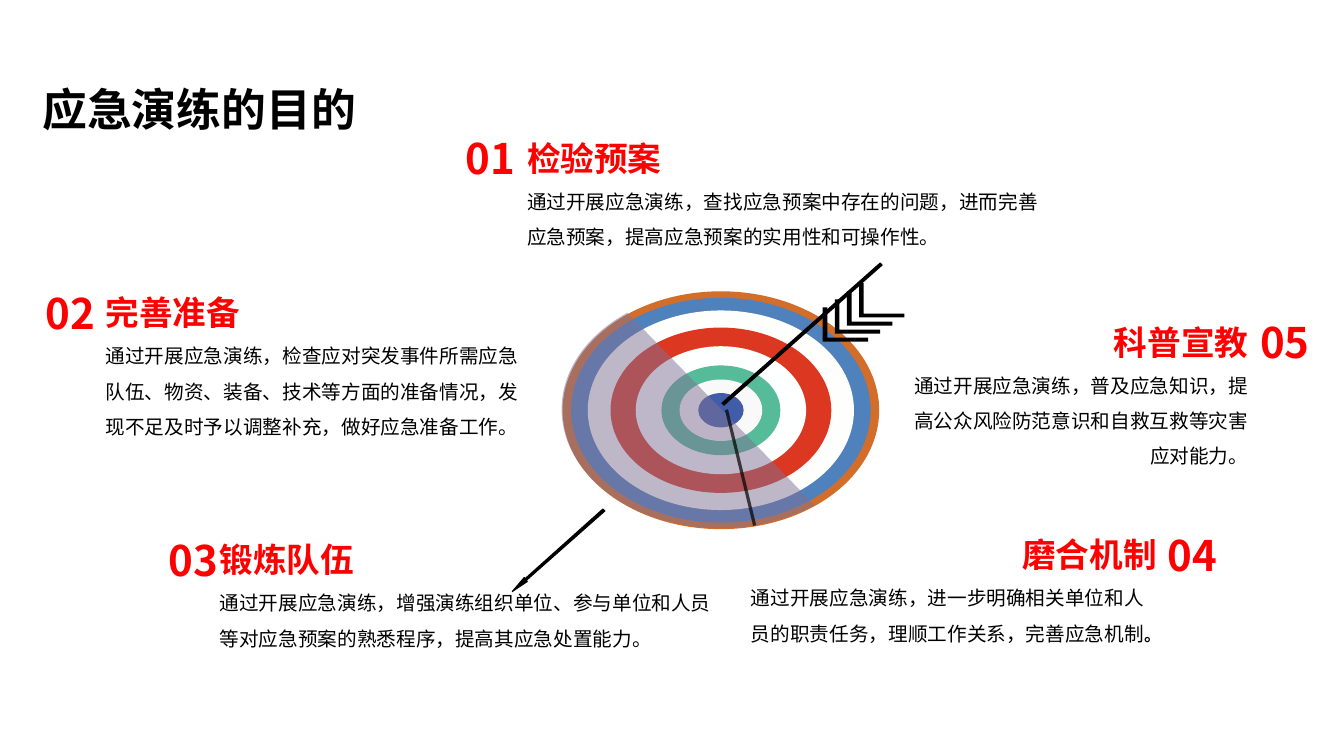
from lxml.etree import SubElement
from pptx import Presentation
from pptx.dml.color import RGBColor
from pptx.enum.shapes import MSO_SHAPE
from pptx.enum.text import MSO_ANCHOR, MSO_AUTO_SIZE, PP_ALIGN
from pptx.oxml.ns import qn
from pptx.util import Pt

PX = 9144
FONT = "Noto Sans CJK SC"
BLACK = "000000"
RED = "FF0000"
LEFT, RIGHT = PP_ALIGN.LEFT, PP_ALIGN.RIGHT

RINGS = [
    (314, 236, "D26E29"),
    (297, 223, "4F81BD"),
    (264, 198, "FEFEFD"),
    (219, 164, "DC3720"),
    (169, 127, "FEFFFF"),
    (118, 89, "55BB99"),
    (82, 61, "F9F9F9"),
    (45, 34, "415DA9"),
]
ARROW_TIP = [(40, 216), (42, 218), (-36, 287), (-35, 288), (-50, 298), (-38, 284), (-37, 285)]
ARROW_SHAFT = [(315, -28), (317, -26), (160, 113), (158, 111)]
ARROW_SHADE = [(192, 232), (189, 233), (161, 118), (164, 117)]

GOALS = [
    ((513, 112, 536, 141), "01", 8, LEFT, LEFT, "检验预案",
     ["通过开展应急演练，查找应急预案中存在的问题，进而完善应急预案，提高应急预案的实用性和可操作性。"]),
    ((735, 505, 422, 141), "04", 9, RIGHT, LEFT, "磨合机制",
     ["通过开展应急演练，进一步明确相关单位和人员的职责任务，理顺工作关系，完善应急机制", "。"]),
    ((881, 294, 367, 177), "05", 8, RIGHT, RIGHT, "科普宣教",
     ["通过开展应急演练，普及应急知识，提高公众风险防范意识和自救互救等灾害应对能力。"]),
    ((208, 510, 516, 141), "03", 18, LEFT, LEFT, "锻炼队伍",
     ["通过开展应急演练，增强演练组织单位、参与单位和人员等对应急预案的熟悉程序，提高其应急处置能力。"]),
    ((95, 265, 438, 177), "02", 9, LEFT, LEFT, "完善准备",
     ["通过开展应急演练，检查应对突发事件所需应急队伍、物资、装备、技术等方面的准备情况，"
      "发现不足及时予以调整补充，做好应急准备工作。"]),
]


def px(*lengths):
    return [round(length * PX) for length in lengths]


def color(hex_string):
    return RGBColor.from_string(hex_string)


def format_run(run, size, hex_string, bold):
    run.font.size = Pt(size)
    run.font.bold = bold
    run.font.color.rgb = color(hex_string)
    run.font.name = FONT
    SubElement(run._r.get_or_add_rPr(), qn("a:ea")).set("typeface", FONT)


def paint(shape, hex_string, alpha=100):
    shape.shadow.inherit = False
    shape.line.fill.background()
    shape.fill.solid()
    shape.fill.fore_color.rgb = color(hex_string)
    if alpha < 100:
        solid = shape.element.spPr.find(qn("a:solidFill"))
        SubElement(solid[0], qn("a:alpha")).set("val", str(alpha * 1000))


def add_text_box(slide, box, alignment, text):
    text_box = slide.shapes.add_textbox(*px(*box))
    frame = text_box.text_frame
    frame.word_wrap = True
    frame.auto_size = MSO_AUTO_SIZE.SHAPE_TO_FIT_TEXT
    frame.text = text
    frame.paragraphs[0].alignment = alignment
    return frame


def add_title(slide, box):
    title = slide.shapes.title
    title.left, title.top, title.width, title.height = px(*box)
    frame = title.text_frame
    frame.text = "应急演练的目的"
    frame.auto_size = MSO_AUTO_SIZE.NONE
    frame.vertical_anchor = MSO_ANCHOR.MIDDLE
    paragraph = frame.paragraphs[0]
    paragraph.alignment = LEFT
    format_run(paragraph.runs[0], 32, BLACK, True)


def add_goal(slide, box, number, overlap, side, body_alignment, heading, body):
    left, top, width, height = box
    frame = add_text_box(slide, box, side, heading)
    heading_paragraph = frame.paragraphs[0]
    heading_paragraph.line_spacing = 1.5
    format_run(heading_paragraph.runs[0], 24, RED, True)

    body_paragraph = frame.add_paragraph()
    body_paragraph.alignment = body_alignment
    body_paragraph.line_spacing = 1.5
    for index, text in enumerate(body):
        run = body_paragraph.add_run()
        run.text = text
        format_run(run, 12 if index else 14, BLACK, index > 0)

    number_width = 90
    if side == LEFT:
        number_left, number_alignment = left + overlap - number_width, RIGHT
    else:
        number_left, number_alignment = left + width - overlap, LEFT
    number_box = (number_left, top + 15, number_width, 61)
    number_frame = add_text_box(slide, number_box, number_alignment, number)
    format_run(number_frame.paragraphs[0].runs[0], 30, RED, True)


def add_outline(shapes, left, top, contours):
    contours = [[px(left + x, top + y) for x, y in contour] for contour in contours]
    builder = shapes.build_freeform(*contours[0][0], scale=1.0)
    for index, contour in enumerate(contours):
        if index:
            builder.move_to(*contour[0])
        builder.add_line_segments(contour[1:], close=True)
    return builder.convert_to_shape()


def add_target(slide, box):
    left, top, width, height = box
    shapes = slide.shapes.add_group_shape().shapes
    for ring_width, ring_height, fill in RINGS:
        ring = shapes.add_shape(MSO_SHAPE.OVAL, *px(
            left + (width - ring_width) / 2, top + (height - ring_height) / 2, ring_width, ring_height))
        paint(ring, fill)

    shade = shapes.add_shape(MSO_SHAPE.CHORD, *px(left - 1, top - 1, width + 1, height))
    shade.adjustments[0], shade.adjustments[1] = 27.335, 135.607
    paint(shade, "807195", 50)

    arrow = add_outline(shapes, left, top, [ARROW_TIP, ARROW_SHAFT])
    paint(arrow, BLACK)
    arrow.line.color.rgb = color(BLACK)
    arrow.line.width = Pt(0.75)

    for index in range(4):
        feather = shapes.add_shape(
            MSO_SHAPE.CORNER, *px(left + 294 - 12 * index, top - 8 + 8 * index, 45, 34))
        feather.adjustments[0], feather.adjustments[1] = 0.115, 0.134
        paint(feather, BLACK)

    paint(add_outline(shapes, left, top, [ARROW_SHADE]), BLACK, 70)


def main():
    presentation = Presentation()
    presentation.slide_width, presentation.slide_height = px(1333, 750)
    slide = presentation.slides.add_slide(presentation.slide_layouts[5])
    add_title(slide, (32, 76, 459, 64))
    add_target(slide, (558, 289, 314, 236))
    for goal in GOALS:
        add_goal(slide, *goal)
    presentation.save("out.pptx")


if __name__ == "__main__":
    main()
